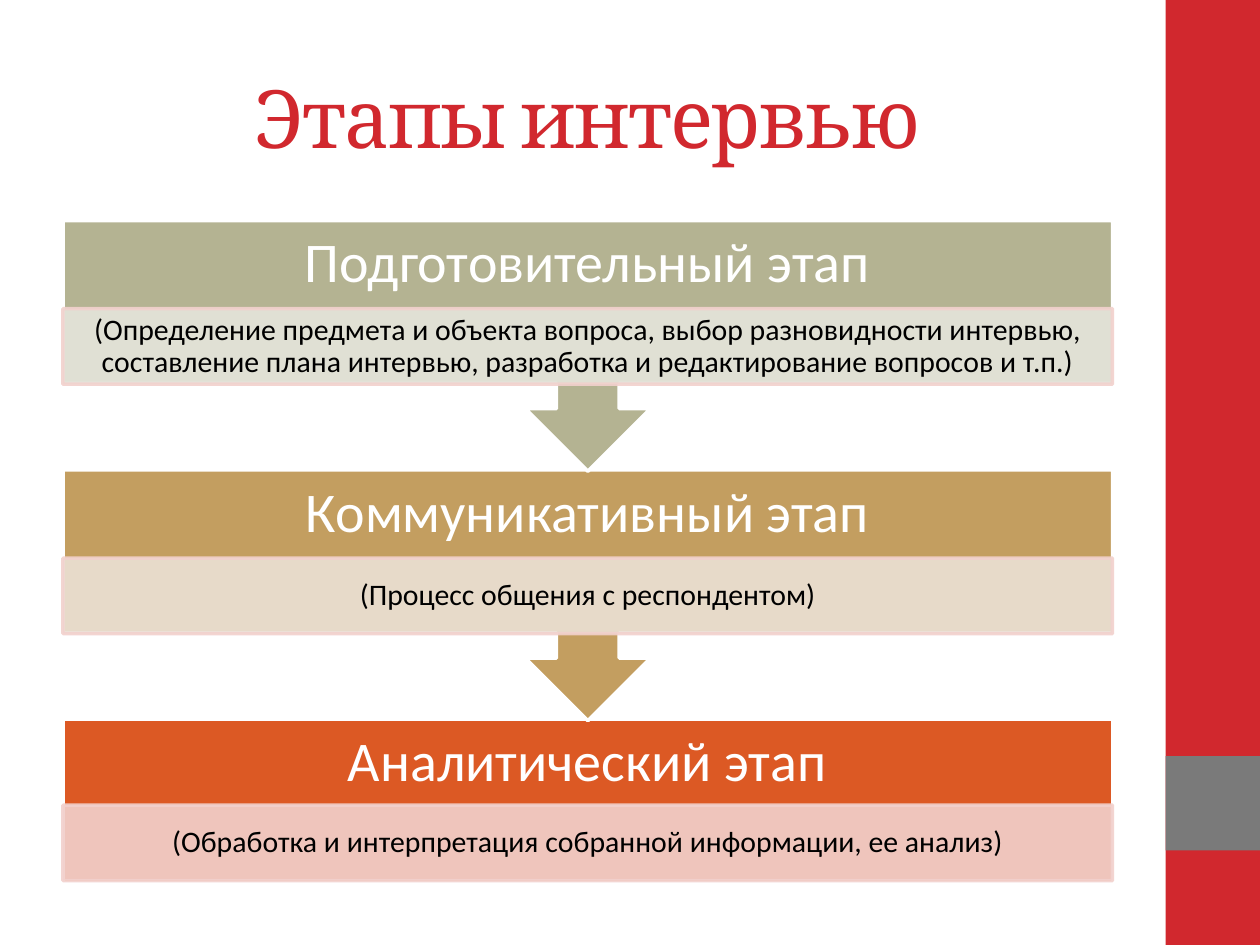
from lxml.etree import SubElement
from pptx import Presentation
from pptx.dml.color import RGBColor
from pptx.enum.shapes import MSO_SHAPE as SHAPE
from pptx.enum.text import MSO_ANCHOR as ANCHOR, MSO_AUTO_SIZE as AUTO, PP_ALIGN as ALIGN
from pptx.oxml.ns import qn
from pptx.util import Inches, Pt

RED, GRAY, WHITE, BLACK, PINK = "D1282E", "7A7A7A", "FFFFFF", "000000", "F2D1CD"
LEFT, WIDTH = 0.5, 8.33
TOP, STEP, CALLOUT_H, LAST_H = 1.75, 1.98, 1.99, 1.3
HEAD_H, DETAIL_H = 0.7, 0.6
STAGES = [
    ("Подготовительный этап",
     "(Определение предмета и объекта вопроса, выбор разновидности интервью, "
     "составление плана интервью, разработка и редактирование вопросов и т.п.)",
     "B4B392", "E5E5DC"),
    ("Коммуникативный этап", "(Процесс общения с респондентом)", "C39E60", "EBE1D5"),
    ("Аналитический этап", "(Обработка и интерпретация собранной информации, ее анализ)",
     "DC5924", PINK),
]


def rgb(color):
    return RGBColor.from_string(color)


def write(tf, text, size, color, font="Calibri", spacing=0.9, margins=(0.1, 0.05), track=None):
    tf.word_wrap = True
    tf.auto_size = AUTO.NONE
    tf.vertical_anchor = ANCHOR.MIDDLE
    tf.margin_left = tf.margin_right = Inches(margins[0])
    tf.margin_top = tf.margin_bottom = Inches(margins[1])
    p = tf.paragraphs[0]
    p.alignment = ALIGN.CENTER
    p.line_spacing = spacing
    r = p.add_run()
    r.text = text
    r.font.name = font
    r.font.size = Pt(size)
    r.font.color.rgb = rgb(color)
    if track:
        r.font._element.set("spc", str(track * 100))


class Deck:
    def __init__(self):
        self.prs = Presentation()
        self.prs.slide_width = Inches(10)
        self.prs.slide_height = Inches(7.5)
        self.s = self.prs.slides.add_slide(self.prs.slide_layouts[5])

    def title(self, text, *box):
        sp = self.s.shapes.title
        sp.left, sp.top, sp.width, sp.height = map(Inches, box)
        write(sp.text_frame, text, 46, RED, font="Cambria", spacing=1.0, track=-1)

    def shape(self, kind, *box, fill, line=None, alpha=None):
        sp = self.s.shapes.add_shape(kind, *map(Inches, box))
        sp.shadow.inherit = False
        sp.fill.solid()
        sp.fill.fore_color.rgb = rgb(fill)
        if line:
            sp.line.color.rgb = rgb(line)
            sp.line.width = Pt(2)
        else:
            sp.line.fill.background()
        if alpha:
            for clr in sp._element.spPr.iter(qn("a:srgbClr")):
                SubElement(clr, qn("a:alpha"), val=str(alpha * 1000))
        return sp

    def heading(self, text, *box):
        sp = self.s.shapes.add_textbox(*map(Inches, box))
        write(sp.text_frame, text, 32, WHITE, margins=(0.25, 0.25))

    def detail(self, text, *box, fill):
        sp = self.shape(SHAPE.RECTANGLE, *box, fill=fill, line=PINK, alpha=90)
        write(sp.text_frame, text, 17, BLACK, margins=(0.13, 0.02))

    def stage(self, top, name, note, color, tint, last):
        if last:
            self.shape(SHAPE.RECTANGLE, LEFT, top, WIDTH, LAST_H, fill=color, line=WHITE)
        else:
            sp = self.shape(SHAPE.UP_ARROW_CALLOUT, LEFT, top, WIDTH, CALLOUT_H,
                            fill=color, line=WHITE)
            sp.rotation = 180
        self.heading(name, LEFT, top, WIDTH, HEAD_H)
        note_top = top + (0.68 if last else HEAD_H)
        self.detail(note, LEFT, note_top, WIDTH, DETAIL_H, fill=tint)


def main():
    deck = Deck()
    deck.shape(SHAPE.RECTANGLE, 9.25, 0, 0.75, 7.5, fill=RED)
    deck.shape(SHAPE.RECTANGLE, 9.25, 6, 0.75, 0.75, fill=GRAY)
    deck.title("Этапы интервью", LEFT, 0.3, WIDTH, 1.25)
    last = len(STAGES) - 1
    for i, stage in reversed(list(enumerate(STAGES))):
        deck.stage(TOP + i * STEP, *stage, last=i == last)
    deck.prs.save("out.pptx")


if __name__ == "__main__":
    main()
